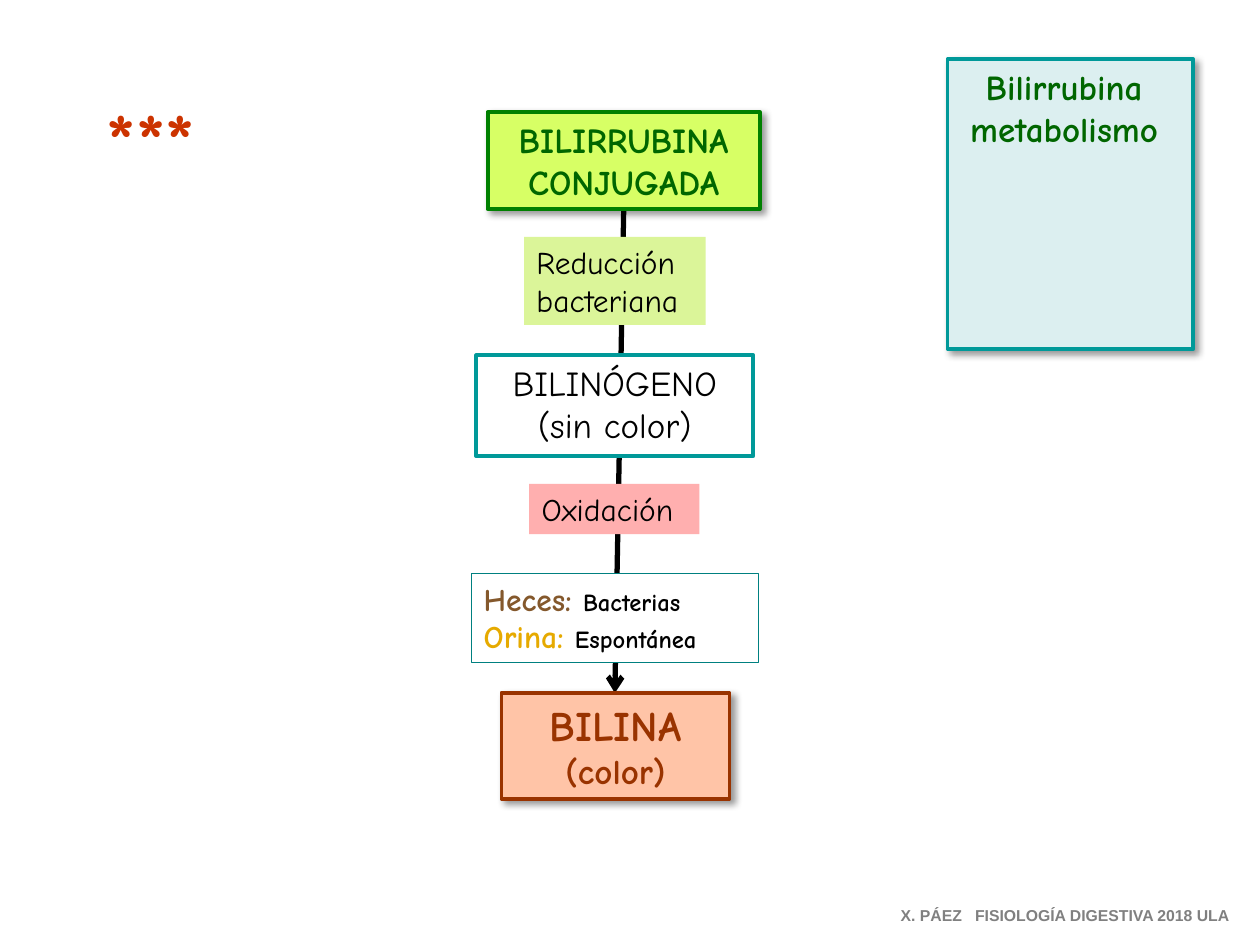
"""Build a slide with the bilirubin metabolism flow from conjugated bilirubin to bilin."""
from lxml import etree
from pptx import Presentation
from pptx.dml.color import RGBColor
from pptx.enum.shapes import MSO_CONNECTOR, MSO_SHAPE
from pptx.enum.text import MSO_ANCHOR, MSO_AUTO_SIZE, PP_ALIGN
from pptx.oxml import parse_xml
from pptx.oxml.ns import nsdecls, qn
from pptx.util import Inches, Pt

RECTANGLE = MSO_SHAPE.RECTANGLE
STRAIGHT = MSO_CONNECTOR.STRAIGHT
LEFT, CENTER = PP_ALIGN.LEFT, PP_ALIGN.CENTER
TOP = MSO_ANCHOR.TOP
FIT_SHAPE = MSO_AUTO_SIZE.SHAPE_TO_FIT_TEXT
FONT = "Comic Neue"

COLORS = {
    "black": "000000", "white": "FFFFFF", "gray": "808080",
    "teal": "009999", "dark teal": "008080", "pale teal": "DCEFF0",
    "green": "008000", "dark green": "006600", "lime": "D7FF65", "pale lime": "DBF599",
    "pink": "FFAFAF", "salmon": "FFC4A7", "rust": "993300", "red": "CC3300",
    "brown": "84582C", "amber": "E6AA00",
}


def shadow_effect(blur, distance, opacity):
    return parse_xml(
        f'<a:effectLst {nsdecls("a")}><a:outerShdw blurRad="{Pt(blur)}" dist="{Pt(distance)}" '
        f'dir="2700000" algn="tl" rotWithShape="0"><a:srgbClr val="{COLORS["black"]}">'
        f'<a:alpha val="{opacity * 1000}"/></a:srgbClr></a:outerShdw></a:effectLst>')


def write_lines(shape, lines, alignment, wrap, font_name=FONT):
    frame = shape.text_frame
    frame.word_wrap = wrap
    frame.auto_size = FIT_SHAPE
    frame.vertical_anchor = TOP
    for index, runs in enumerate(lines):
        paragraph = frame.paragraphs[0] if index == 0 else frame.add_paragraph()
        paragraph.alignment = alignment
        for text, size, color, bold in runs:
            run = paragraph.add_run()
            run.text = text
            run.font.size = Pt(size)
            run.font.bold = bold
            run.font.color.rgb = RGBColor.from_string(COLORS[color])
            run.font.name = font_name


presentation = Presentation()
presentation.slide_width, presentation.slide_height = Inches(10), Inches(7.5)
slide = presentation.slides.add_slide(presentation.slide_layouts[5])
title = slide.shapes.title

arrow = slide.shapes.add_connector(STRAIGHT, Inches(4.95), Inches(1.67), Inches(4.88), Inches(5.5))
arrow.line.color.rgb = RGBColor.from_string(COLORS["black"])
arrow.line.width = Pt(3)
etree.SubElement(arrow.line._get_or_add_ln(), qn("a:tailEnd"), type="arrow")
etree.SubElement(arrow._element.spPr, qn("a:effectLst"))

boxes = [
    (None, (4.16, 1.88, 1.44, 0.7), "pale lime", None, 0, False, LEFT, False,
     [[("Reducción", 18, "black", False)], [("bacteriana", 18, "black", False)]]),
    (None, (4.2, 3.84, 1.35, 0.4), "pink", None, 0, False, LEFT, False,
     [[("Oxidación", 18, "black", False)]]),
    (None, (3.78, 2.82, 2.2, 0.8), "white", "teal", 2.25, False, CENTER, True,
     [[("BILINÓGENO", 20, "black", False)], [("(sin color)", 20, "black", False)]]),
    (None, (3.87, 0.89, 2.16, 0.77), "lime", "green", 2.25, True, CENTER, False,
     [[("BILIRRUBINA", 20, "dark green", True)], [("CONJUGADA", 20, "dark green", True)]]),
    (None, (3.74, 4.55, 2.28, 0.71), "white", "dark teal", 0.75, False, LEFT, True,
     [[("Heces: ", 18, "brown", True), ("Bacterias", 14, "black", True)],
      [("Orina: ", 18, "amber", True), ("Espontánea", 14, "black", True)]]),
    (None, (3.98, 5.5, 1.81, 0.84), "salmon", "rust", 2.25, True, CENTER, True,
     [[("BILINA", 24, "rust", True)], [("(color)", 20, "rust", True)]]),
    (title, (7.52, 0.47, 1.95, 0.77), "pale teal", "teal", 2.25, True, CENTER, False,
     [[("Bilirrubina ", 20, "dark green", True)], [("metabolismo ", 20, "dark green", True)]]),
]
for placeholder, position, fill, outline, width, shadowed, alignment, wrap, lines in boxes:
    left, top, box_width, height = map(Inches, position)
    box = placeholder or slide.shapes.add_shape(RECTANGLE, left, top, box_width, height)
    box.left, box.top, box.width, box.height = left, top, box_width, height
    box.fill.solid()
    box.fill.fore_color.rgb = RGBColor.from_string(COLORS[fill])
    if outline:
        box.line.color.rgb = RGBColor.from_string(COLORS[outline])
        box.line.width = Pt(width)
    else:
        box.line.fill.background()
    if shadowed:
        box._element.spPr.append(shadow_effect(4, 3, 40))
    else:
        box.shadow.inherit = False
    write_lines(box, lines, alignment, wrap)

stars = slide.shapes.add_textbox(Inches(0.75), Inches(0.68), Inches(1.18), Inches(0.84))
write_lines(stars, [[("***", 44, "red", True)]], LEFT, False)
star_properties = stars.text_frame.paragraphs[0].runs[0].font._element
star_properties.find(qn("a:solidFill")).addnext(shadow_effect(0, 3, 100))

credit = slide.shapes.add_textbox(Inches(7.05), Inches(7.14), Inches(2.85), Inches(0.25))
credit_runs = [(text, 9, "gray", True) for text in ("X. PÁEZ", " ", "FISIOLOGÍA DIGESTIVA 2018 ULA")]
write_lines(credit, [credit_runs], LEFT, False, "Arial")
credit.text_frame.paragraphs[0].runs[1].font._element.set("spc", "500")

presentation.save("out.pptx")
